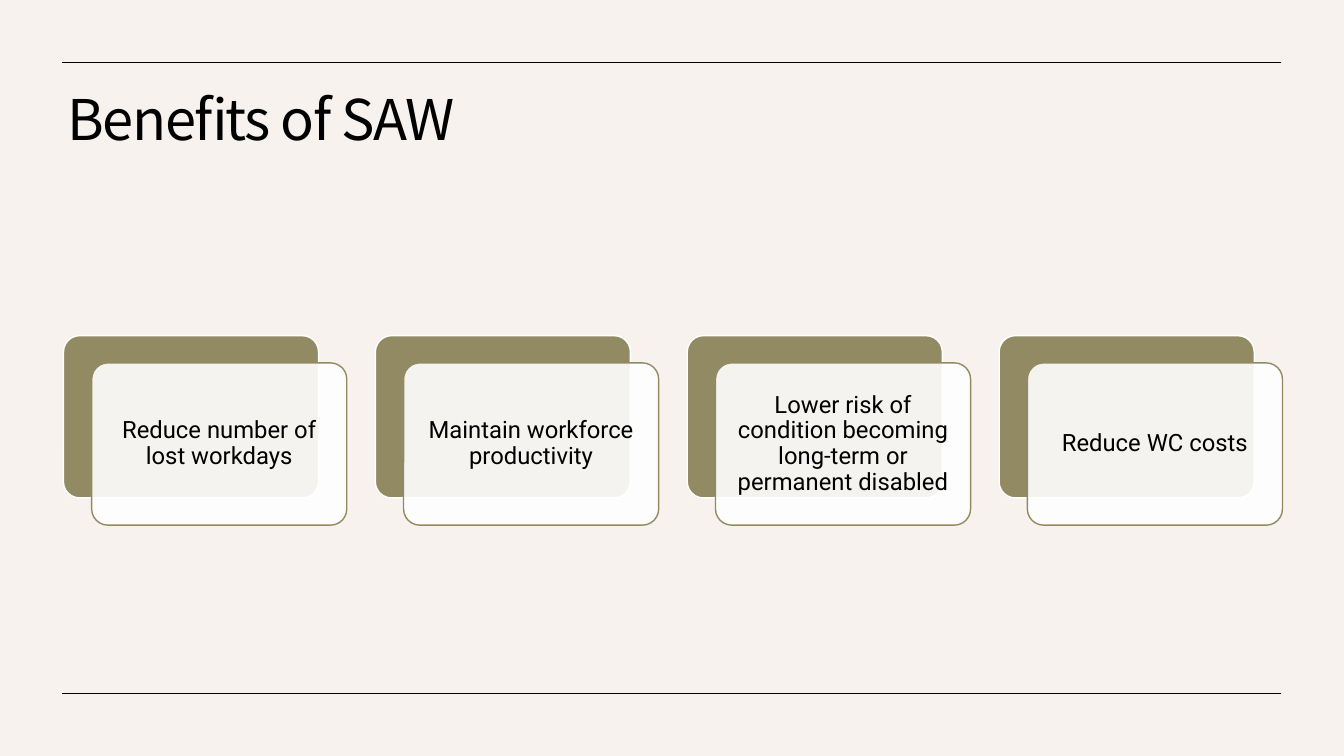
from dataclasses import dataclass

from lxml import etree
from pptx import Presentation
from pptx.dml.color import RGBColor
from pptx.enum.shapes import MSO_CONNECTOR, MSO_SHAPE
from pptx.enum.text import MSO_ANCHOR, MSO_AUTO_SIZE, PP_ALIGN
from pptx.oxml.ns import qn
from pptx.util import Inches, Pt

STRAIGHT = MSO_CONNECTOR.STRAIGHT
ROUNDED = MSO_SHAPE.ROUNDED_RECTANGLE
TOP, MIDDLE = MSO_ANCHOR.TOP, MSO_ANCHOR.MIDDLE
LEFT, CENTER = PP_ALIGN.LEFT, PP_ALIGN.CENTER
NO_FIT = MSO_AUTO_SIZE.NONE


@dataclass(frozen=True)
class Theme:
    background: RGBColor = RGBColor.from_string("F7F2EE")
    ink: RGBColor = RGBColor.from_string("000000")
    olive: RGBColor = RGBColor.from_string("928A63")
    white: RGBColor = RGBColor.from_string("FFFFFF")
    title_font: str = "Noto Sans CJK KR"
    body_font: str = "Roboto"
    title_size: int = 40
    body_size: int = 17


theme = Theme()


def add_card(left, top, fill, line):
    card = page.shapes.add_shape(
        ROUNDED, Inches(left), Inches(top), Inches(2.53), Inches(1.61))
    card.adjustments[0] = 0.1
    card.shadow.inherit = False
    card.fill.solid()
    card.fill.fore_color.rgb = fill
    card.line.color.rgb = line
    card.line.width = Pt(1)
    return card


def write_text(frame, text, font, size, align):
    frame.word_wrap = True
    para = frame.paragraphs[0]
    para.alignment = align
    para.line_spacing = 0.9
    span = para.add_run()
    span.text = text
    span.font.name = font
    span.font.size = Pt(size)
    span.font.color.rgb = theme.ink
    return span


deck = Presentation()
deck.slide_width = Inches(13.33)
deck.slide_height = Inches(7.5)
page = deck.slides.add_slide(deck.slide_layouts[5])
page.background.fill.solid()
page.background.fill.fore_color.rgb = theme.background

title = page.shapes.title
title.left, title.top = Inches(0.57), Inches(0.86)
title.width, title.height = Inches(12.15), Inches(1.15)
title.text_frame.auto_size = NO_FIT
title.text_frame.vertical_anchor = TOP
title_span = write_text(
    title.text_frame, "Benefits of SAW", theme.title_font, theme.title_size, LEFT)
title_span.font._element.set("spc", "-100")

for rule_top in (0.62, 6.88):
    rule = page.shapes.add_connector(
        STRAIGHT, Inches(12.71), Inches(rule_top), Inches(0.62), Inches(rule_top))
    rule.line.color.rgb = theme.ink
    rule.line.width = Pt(0.5)
    etree.SubElement(rule._element.spPr, qn("a:effectLst"))

benefits = [
    "Reduce number of lost workdays",
    "Maintain workforce productivity",
    "Lower risk of condition becoming long-term or permanent disabled",
    "Reduce WC costs",
]
first_left, last_left = 0.63, 9.91
pitch = (last_left - first_left) / (len(benefits) - 1)

for index, benefit in enumerate(benefits):
    left = first_left + index * pitch
    add_card(left, 3.33, theme.olive, theme.white)
    front = add_card(left + 0.28, 3.6, theme.white, theme.olive)
    front_color = front._element.spPr.find(qn("a:solidFill"))[0]
    etree.SubElement(front_color, qn("a:alpha"), val="90000")

    frame = front.text_frame
    frame.vertical_anchor = MIDDLE
    frame.margin_left = frame.margin_right = Inches(0.07)
    frame.margin_top = frame.margin_bottom = Inches(0.07)
    write_text(frame, benefit, theme.body_font, theme.body_size, CENTER)

deck.save("out.pptx")
